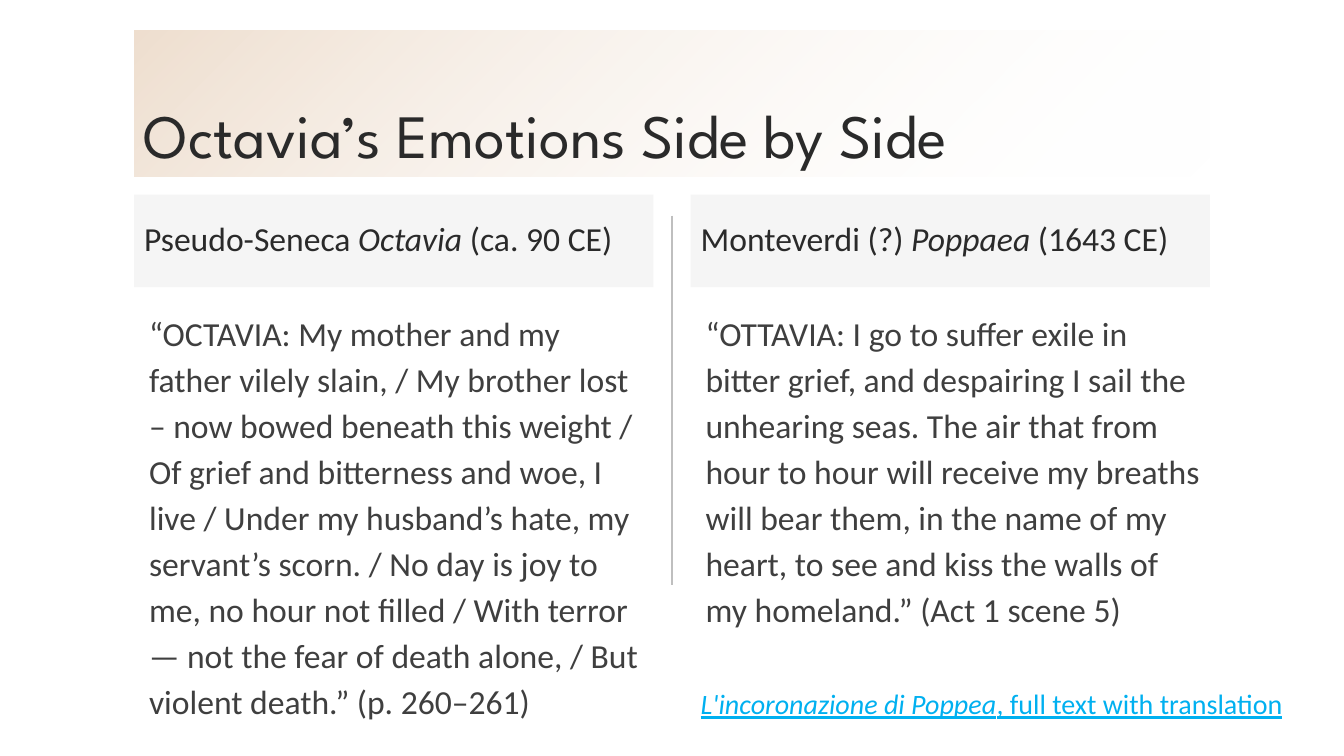
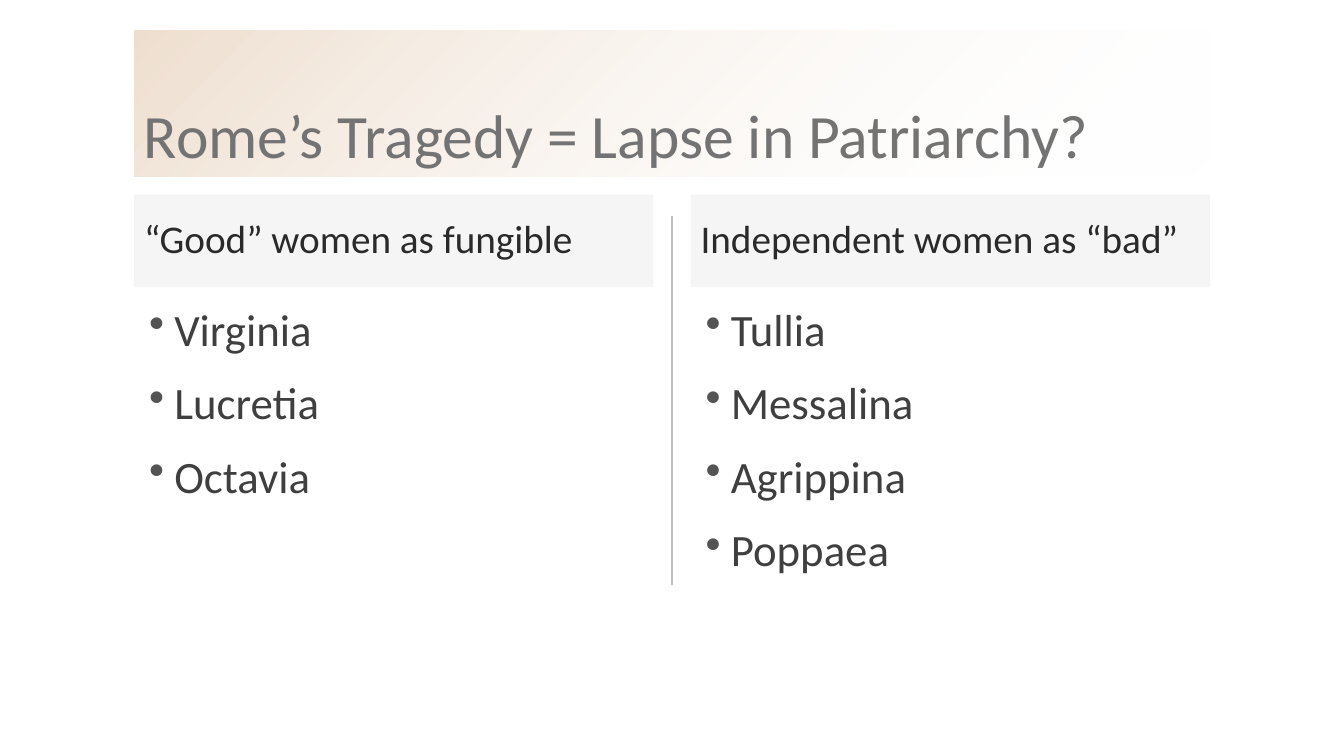
from dataclasses import dataclass

from lxml import etree
from pptx import Presentation
from pptx.dml.color import RGBColor
from pptx.enum.shapes import MSO_CONNECTOR, MSO_SHAPE
from pptx.enum.text import MSO_ANCHOR, MSO_AUTO_SIZE
from pptx.oxml.ns import qn
from pptx.util import Inches, Pt

RECT = MSO_SHAPE.RECTANGLE
LINE = MSO_CONNECTOR.STRAIGHT
TOP, MIDDLE, BOTTOM = MSO_ANCHOR.TOP, MSO_ANCHOR.MIDDLE, MSO_ANCHOR.BOTTOM
GROW = MSO_AUTO_SIZE.SHAPE_TO_FIT_TEXT


@dataclass(frozen=True)
class Theme:
    font: str = "Calibri"
    display: str = "League Spartan"
    ink: str = "2A2A2A"
    body: str = "3F3F3F"
    muted: str = "737373"
    dot: str = "545454"
    rule: str = "BFBFBF"
    tan: str = "CE9F71"
    white: str = "FFFFFF"
    link: str = "00B0F0"
    title_pt: int = 44
    list_pt: int = 32
    head_pt: int = 28
    text_pt: int = 24
    link_pt: int = 20


T = Theme()

# Grid: two equal columns between the side margins
WIDTH, HEIGHT = 13.33, 7.5
LEFT, SPAN, GAP = 1.33, 10.67, 0.37
COL = (SPAN - GAP) / 2
COLS = [LEFT, LEFT + COL + GAP]
TITLE_Y, TITLE_H = 0.3, 1.45
HEAD_Y, HEAD_H = 1.93, 0.92
BODY_Y = 3
RULE_Y, RULE_END = 2.14, 5.8


def rgb(code):
    return RGBColor.from_string(code)


def inches(box):
    return [Inches(v) for v in box]


def fade(shape, *shares):
    """Set the opacity, in percent, of each fill colour in turn."""
    for tint, share in zip(shape.element.spPr.iter(qn("a:srgbClr")), shares):
        etree.SubElement(tint, qn("a:alpha"), val=str(share * 1000))


def write(par, runs, size, color, font=T.font, lines=0.9, before=0):
    """Fill a paragraph; runs are (text, italic) pairs."""
    par.line_spacing = lines
    par.space_before = Pt(before)
    for text, slant in runs:
        run = par.add_run()
        run.text = text
        face = run.font
        face.name, face.size, face.italic = font, Pt(size), slant
        face.color.rgb = rgb(color)


def indent(par, left, first=0, bullet=None):
    props = par._p.get_or_add_pPr()
    props.set("marL", str(Inches(left)))
    props.set("indent", str(Inches(first)))
    if bullet:
        tint = etree.SubElement(props, qn("a:buClr"))
        etree.SubElement(tint, qn("a:srgbClr"), val=T.dot)
        etree.SubElement(props, qn("a:buChar"), char=bullet)


def panel(slide, box, anchor):
    shape = slide.shapes.add_shape(RECT, *inches(box))
    shape.shadow.inherit = False
    shape.line.fill.background()
    frame = shape.text_frame
    frame.word_wrap, frame.vertical_anchor = True, anchor
    frame.paragraphs[0].alignment = 1
    return shape


def textbox(slide, box, wrap=True):
    frame = slide.shapes.add_textbox(*inches(box)).text_frame
    frame.word_wrap, frame.vertical_anchor = wrap, TOP
    return frame


# Title band
def banner(slide, box, title, font, color):
    shape = panel(slide, box, BOTTOM)
    fill = shape.fill
    fill.gradient()
    fill.gradient_angle = 315
    for stop, (tint, spot) in zip(fill.gradient_stops,
                                  [(T.tan, 0), (T.white, 1)]):
        stop.color.rgb, stop.position = rgb(tint), spot
    fade(shape, 34, 0)
    write(shape.text_frame.paragraphs[0], [(title, False)],
          T.title_pt, color, font)


# Column heading
def heading(slide, box, runs, size):
    shape = panel(slide, box, MIDDLE)
    shape.fill.solid()
    shape.fill.fore_color.rgb = rgb(T.rule)
    fade(shape, 15)
    write(shape.text_frame.paragraphs[0], runs, size, T.ink)


# Column bodies: a quotation or a bulleted list
def quote(slide, box, text):
    par = textbox(slide, box).paragraphs[0]
    write(par, [(text, False)], T.text_pt, T.body, lines=1.14, before=18)
    indent(par, 0.05)


def bullets(slide, box, items):
    frame = textbox(slide, box)
    for i, item in enumerate(items):
        par = frame.add_paragraph() if i else frame.paragraphs[0]
        write(par, [(item, False)], T.list_pt, T.body, before=18)
        indent(par, 0.3, -0.25, "•")


# Source line
def source(slide, box, runs):
    frame = textbox(slide, box, wrap=False)
    frame.auto_size = GROW
    par = frame.paragraphs[0]
    write(par, runs, T.link_pt, T.link, lines=1.25)
    for run in par.runs:
        run.font.underline = True


# Two-column comparison slide
def compare(deck, title, font, color, heads, size, fill, bodies, depth):
    slide = deck.slides.add_slide(deck.slide_layouts[6])
    mid = WIDTH / 2
    rule = slide.shapes.add_connector(
        LINE, *inches([mid, RULE_Y, mid, RULE_END]))
    rule.line.color.rgb, rule.line.width = rgb(T.rule), Pt(1)
    etree.SubElement(rule.element.spPr, qn("a:effectLst"))
    banner(slide, (LEFT, TITLE_Y, SPAN, TITLE_H), title, font, color)
    for x, head, body in zip(COLS, heads, bodies):
        heading(slide, (x, HEAD_Y, COL, HEAD_H), head, size)
        fill(slide, (x, BODY_Y, COL, depth), body)
    return slide


def main():
    deck = Presentation()
    deck.slide_width, deck.slide_height = inches([WIDTH, HEIGHT])

    slide = compare(
        deck, "Octavia’s Emotions Side by Side", T.display, T.ink,
        [[("Pseudo-Seneca ", False), ("Octavia", True),
          (" (ca. 90 CE)", False)],
         [("Monteverdi (?) ", False), ("Poppaea ", True),
          ("(1643 CE)", False)]],
        T.text_pt, quote,
        ["“OCTAVIA: My mother and my father vilely slain, / My brother "
         "lost – now bowed beneath this weight / Of grief and bitterness "
         "and woe, I live / Under my husband’s hate, my servant’s scorn. / "
         "No day is joy to me, no hour not filled / With terror — not the "
         "fear of death alone, / But violent death.” (p. 260–261)",
         "“OTTAVIA: I go to suffer exile in bitter grief, and despairing I "
         "sail the unhearing seas. The air that from hour to hour will "
         "receive my breaths will bear them, in the name of my heart, to "
         "see and kiss the walls of my homeland.” (Act 1 scene 5)"],
        HEIGHT - BODY_Y)
    source(slide, (COLS[1], 6.68, 6.02, 0.49),
           [("L'incoronazione di Poppea", True),
            (", full text with translation", False)])

    compare(
        deck, "Rome’s Tragedy = Lapse in Patriarchy?", T.font, T.muted,
        [[("“Good” women as fungible", False)],
         [("Independent women as “bad”", False)]],
        T.head_pt, bullets,
        [["Virginia", "Lucretia", "Octavia"],
         ["Tullia", "Messalina", "Agrippina", "Poppaea"]],
        HEIGHT / 2)

    deck.save("out.pptx")


if __name__ == "__main__":
    main()
